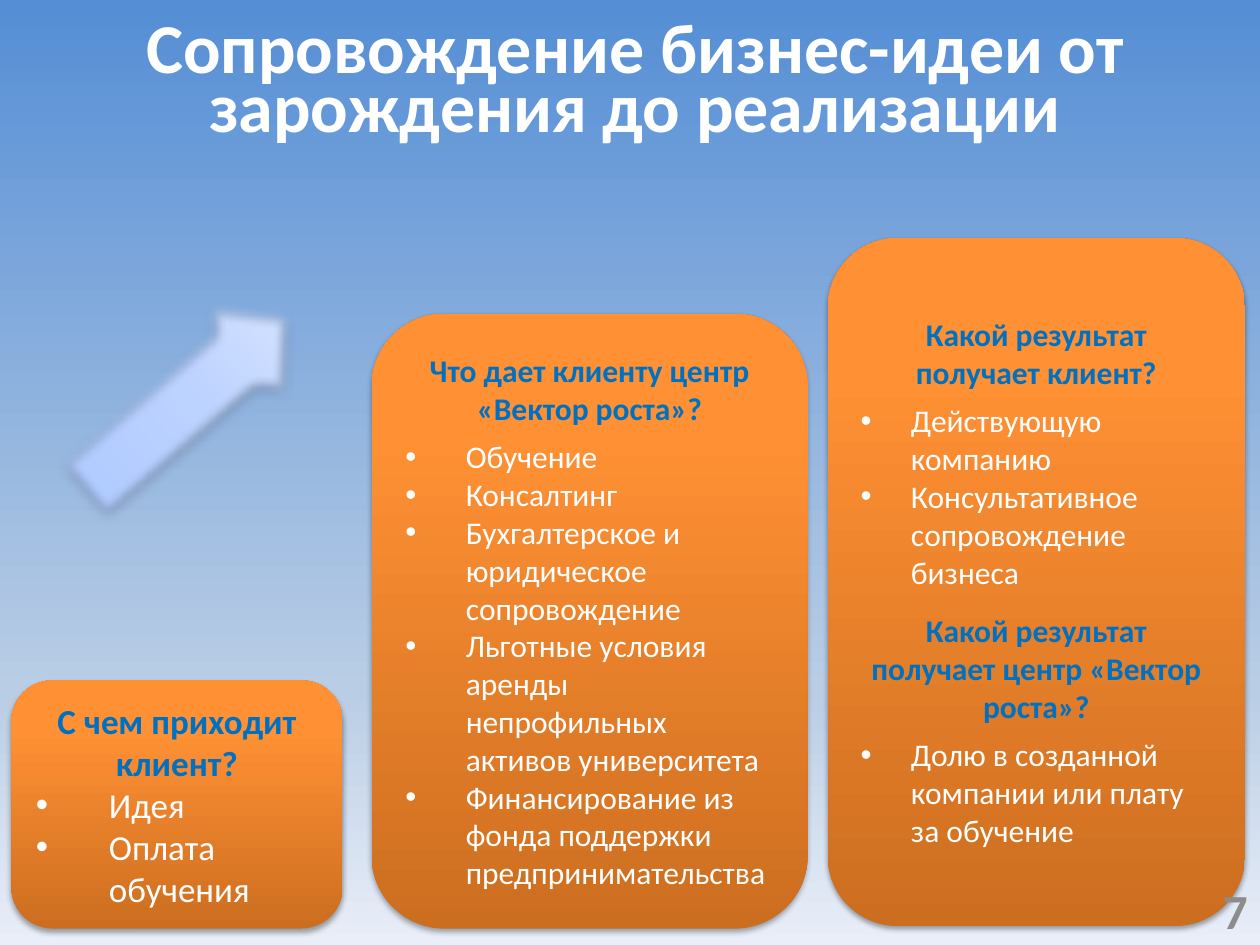
from dataclasses import dataclass

from lxml.etree import SubElement
from pptx import Presentation
from pptx.dml.color import RGBColor
from pptx.enum.shapes import MSO_SHAPE as SHAPE
from pptx.enum.text import MSO_ANCHOR as ANCHOR, PP_ALIGN as ALIGN
from pptx.oxml.ns import qn
from pptx.util import Inches, Pt

FONT = "Calibri"
WHITE, BLUE, GRAY = "FFFFFF", "0070C0", "8C8C8C"
SKY = [(0, "558ED5"), (73, "B9CDE5"), (100, "E9EEF8")]
ORANGE = [(0, "CC6E20"), (80, "FF9034"), (100, "FF9136")]
PALE = [(0, "A4C4FF"), (59, "BFD4FF"), (100, "E6EEFF")]


@dataclass
class Line:
    text: str
    after: float = 0
    heading: bool = False


@dataclass
class Card:
    box: tuple[float, float, float, float]
    size: float
    indent: float
    lines: list[Line]


CARDS = [
    Card((0.09, 5.4, 2.63, 1.97), 20, 0.58, [
        Line("С чем приходит клиент?", heading=True),
        Line("Идея"),
        Line("Оплата обучения"),
    ]),
    Card((2.95, 2.49, 3.46, 4.88), 18, 0.48, [
        Line("Что дает клиенту центр «Вектор роста»?", 6, True),
        Line("Обучение"),
        Line("Консалтинг"),
        Line("Бухгалтерское и юридическое сопровождение"),
        Line("Льготные условия аренды непрофильных активов университета"),
        Line("Финансирование из фонда поддержки предпринимательства"),
    ]),
    Card((6.57, 1.89, 3.31, 5.46), 18, 0.4, [
        Line("Какой результат получает клиент?", 6, True),
        Line("Действующую компанию"),
        Line("Консультативное сопровождение бизнеса", 12),
        Line("Какой результат получает центр «Вектор роста»?", 6, True),
        Line("Долю в созданной компании или плату за обучение"),
    ]),
]


def rgb(color: str) -> RGBColor:
    return RGBColor.from_string(color)


def add_node(parent, tag: str, **attrs):
    return SubElement(parent, qn(tag), {k: str(v) for k, v in attrs.items()})


def set_gradient(fill, root, stops: list, angle: float) -> None:
    fill.gradient()
    fill.gradient_angle = angle
    stop_list = root.xpath(".//a:gsLst")[0]
    for old in list(stop_list):
        stop_list.remove(old)
    for pos, color in stops:
        stop = add_node(stop_list, "a:gs", pos=pos * 1000)
        add_node(stop, "a:srgbClr", val=color)


def add_effects(sp, alpha: int, distance: float, soft: float = 0) -> None:
    effects = add_node(sp._element.spPr, "a:effectLst")
    shadow = add_node(effects, "a:outerShdw", blurRad=Pt(3.1),
                      dist=Pt(distance), dir=90 * 60000, rotWithShape=0)
    color = add_node(shadow, "a:srgbClr", val="000000")
    add_node(color, "a:alpha", val=alpha * 1000)
    if soft:
        add_node(effects, "a:softEdge", rad=Inches(soft))


def add_filled(s, kind, box: tuple, stops: list, angle: float):
    sp = s.shapes.add_shape(kind, *map(Inches, box))
    set_gradient(sp.fill, sp._element.spPr, stops, angle)
    sp.line.fill.background()
    return sp


def style(p, size: float, color: str, bold: bool, align) -> None:
    p.alignment = align
    for r in p.runs:
        r.font.name = FONT
        r.font.size = Pt(size)
        r.font.bold = bold
        r.font.color.rgb = rgb(color)


def add_bullet(p, indent: float) -> None:
    pr = p._p.get_or_add_pPr()
    pr.set("marL", str(Inches(indent)))
    pr.set("indent", str(-Inches(indent)))
    add_node(pr, "a:buFont", typeface="Arial")
    add_node(pr, "a:buChar", char="•")


def add_card(s, card: Card) -> None:
    sp = add_filled(s, SHAPE.ROUNDED_RECTANGLE, card.box, ORANGE, 90)
    add_effects(sp, 35, 1.8)
    tf = sp.text_frame
    tf.word_wrap = True
    tf.vertical_anchor = ANCHOR.MIDDLE
    tf.text = "\n".join(line.text for line in card.lines)
    for p, line in zip(tf.paragraphs, card.lines):
        p.space_after = Pt(line.after)
        if line.heading:
            style(p, card.size, BLUE, True, ALIGN.CENTER)
        else:
            style(p, card.size, WHITE, False, ALIGN.LEFT)
            add_bullet(p, card.indent)


def add_label(s, box: tuple, text: str, size: float, color: str, align, anchor):
    tf = s.shapes.add_textbox(*map(Inches, box)).text_frame
    tf.word_wrap = True
    tf.vertical_anchor = anchor
    tf.text = text
    p = tf.paragraphs[0]
    style(p, size, color, True, align)
    return p


def add_arrow(s) -> None:
    sp = add_filled(s, SHAPE.STRIPED_RIGHT_ARROW, (0.14, 2.59, 2.51, 1.37), PALE, 0)
    sp.adjustments[0] = 0.53
    sp.adjustments[1] = 0.46
    sp.rotation = 319.5
    add_effects(sp, 38, 1.6, soft=0.09)


def main() -> None:
    prs = Presentation()
    prs.slide_width, prs.slide_height = Inches(10), Inches(7.5)
    s = prs.slides.add_slide(prs.slide_layouts[6])
    set_gradient(s.background.fill, s._element, SKY, 270)
    title = add_label(s, (0.04, 0.16, 10, 1.18),
                      "Сопровождение бизнес-идеи от зарождения до реализации",
                      40, WHITE, ALIGN.CENTER, ANCHOR.TOP)
    title.line_spacing = 0.7
    for card in CARDS:
        add_card(s, card)
    add_arrow(s)
    add_label(s, (7.67, 7.02, 2.33, 0.4), "7", 28, GRAY, ALIGN.RIGHT, ANCHOR.MIDDLE)
    prs.save("out.pptx")


if __name__ == "__main__":
    main()
